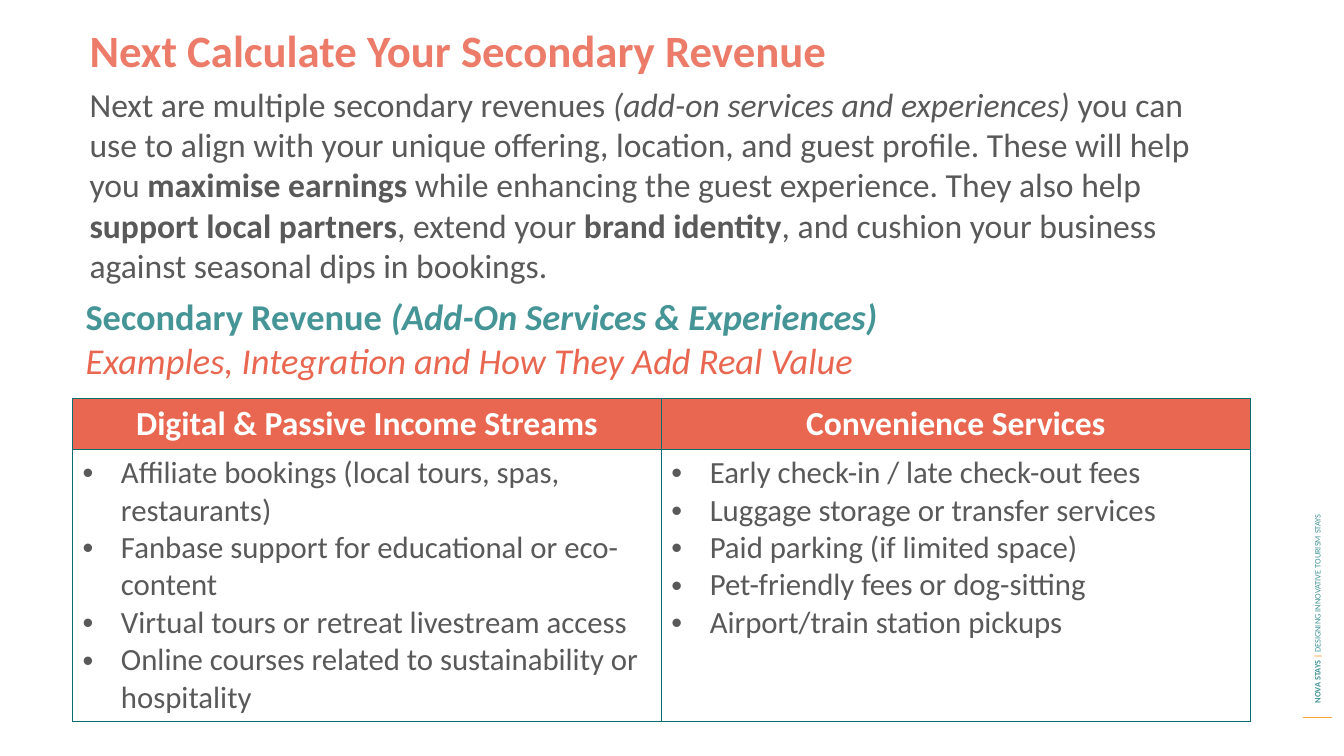
from dataclasses import dataclass

from lxml.etree import SubElement
from pptx import Presentation
from pptx.dml.color import RGBColor
from pptx.enum.shapes import MSO_CONNECTOR
from pptx.enum.text import MSO_ANCHOR, PP_ALIGN
from pptx.oxml.ns import qn
from pptx.util import Inches, Pt

FONT = "Calibri"
COLORS = {
    "coral": "E96751",
    "title": "EC7C69",
    "teal": "459597",
    "border": "086D6E",
    "text": "595959",
    "amber": "FBA63D",
    "white": "FFFFFF",
}


@dataclass(frozen=True)
class Span:
    text: str
    bold: bool | None = None
    italic: bool | None = None
    color: str | None = None


@dataclass(frozen=True)
class Para:
    spans: list[Span]
    size: float
    color: str
    bold: bool = False
    italic: bool = False
    space_after: float = 0
    align: PP_ALIGN = PP_ALIGN.LEFT
    bullet: bool = False


@dataclass(frozen=True)
class TextBlock:
    left: float
    top: float
    width: float
    height: float
    paras: list[Para]
    rotation: float = 0
    anchor: MSO_ANCHOR = MSO_ANCHOR.TOP


@dataclass(frozen=True)
class RevenueColumn:
    heading: str
    examples: list[str]


TEXT_BLOCKS = [
    TextBlock(10.18, 4.09, 5.77, 0.2, [
        Para([
            Span("NOVA STAYS ", bold=True),
            Span("| ", bold=True, color="amber"),
            Span("DESIGNING INNOVATIVE TOURISM STAYS"),
        ], 6, "teal"),
    ], rotation=270, anchor=MSO_ANCHOR.MIDDLE),
    TextBlock(0.75, 2.87, 11.61, 0.88, [
        Para([
            Span("Secondary Revenue "),
            Span("(Add-On Services & Experiences)", italic=True),
        ], 26, "teal", bold=True),
        Para([Span("Examples, Integration and How They Add Real Value")],
             26, "coral", italic=True),
    ]),
    TextBlock(0.79, 0.18, 13.21, 0.64, [
        Para([Span("Next Calculate Your Secondary Revenue")], 32, "title", bold=True),
    ]),
    TextBlock(0.79, 0.78, 11.48, 2.12, [
        Para([
            Span("Next are multiple secondary revenues "),
            Span("(add-on services and experiences) ", italic=True),
            Span("you can use to align with your unique offering, location, and guest "
                 "profile. These will help you "),
            Span("maximise earnings ", bold=True),
            Span("while enhancing the guest experience. They also help "),
            Span("support local partners", bold=True),
            Span(", extend your "),
            Span("brand identity", bold=True),
            Span(", and cushion your business against seasonal dips in bookings."),
        ], 24, "text", space_after=6),
    ]),
]

REVENUE_COLUMNS = [
    RevenueColumn("Digital & Passive Income Streams", [
        "Affiliate bookings (local tours, spas, restaurants)",
        "Fanbase support for educational or eco-content",
        "Virtual tours or retreat livestream access",
        "Online courses related to sustainability or hospitality",
    ]),
    RevenueColumn("Convenience Services", [
        "Early check-in / late check-out fees",
        "Luggage storage or transfer services",
        "Paid parking (if limited space)",
        "Pet-friendly fees or dog-sitting",
        "Airport/train station pickups",
    ]),
]


def rgb(name: str) -> RGBColor:
    return RGBColor.from_string(COLORS[name])


def add_bullet(paragraph) -> None:
    properties = paragraph._p.get_or_add_pPr()
    properties.set("marL", str(Inches(0.38)))
    properties.set("indent", str(-Inches(0.38)))
    SubElement(properties, qn("a:buFont"), typeface="Arial")
    SubElement(properties, qn("a:buChar"), char="•")


def write_paras(frame, paras: list[Para]) -> None:
    for index, para in enumerate(paras):
        paragraph = frame.add_paragraph() if index else frame.paragraphs[0]
        if para.bullet:
            add_bullet(paragraph)
        paragraph.alignment = para.align
        paragraph.space_after = Pt(para.space_after)
        font = paragraph.font
        font.name, font.size = FONT, Pt(para.size)
        font.bold, font.italic = para.bold, para.italic
        font.color.rgb = rgb(para.color)
        for span in para.spans:
            run = paragraph.add_run()
            run.text = span.text
            run.font.bold, run.font.italic = span.bold, span.italic
            if span.color:
                run.font.color.rgb = rgb(span.color)


def add_text_block(page, block: TextBlock) -> None:
    box = page.shapes.add_textbox(Inches(block.left), Inches(block.top),
                                  Inches(block.width), Inches(block.height))
    box.rotation = block.rotation
    box.text_frame.word_wrap = True
    box.text_frame.vertical_anchor = block.anchor
    write_paras(box.text_frame, block.paras)


def add_borders(cell) -> None:
    properties = cell._tc.get_or_add_tcPr()
    for side in ("lnL", "lnR", "lnT", "lnB"):
        line = SubElement(properties, qn(f"a:{side}"), w=str(Pt(1)))
        fill = SubElement(line, qn("a:solidFill"))
        SubElement(fill, qn("a:srgbClr"), val=COLORS["border"])


def add_revenue_table(page, columns: list[RevenueColumn]) -> None:
    table = page.shapes.add_table(2, len(columns), Inches(0.72), Inches(3.95),
                                  Inches(11.68), Inches(3.17)).table
    table.rows[0].height, table.rows[1].height = Inches(0.5), Inches(2.67)
    for index, column in enumerate(columns):
        heading, examples = table.cell(0, index), table.cell(1, index)
        for cell, fill in ((heading, "coral"), (examples, "white")):
            add_borders(cell)
            cell.fill.solid()
            cell.fill.fore_color.rgb = rgb(fill)
        write_paras(heading.text_frame, [
            Para([Span(column.heading)], 24, "white", bold=True, align=PP_ALIGN.CENTER)])
        write_paras(examples.text_frame, [
            Para([Span(example)], 22, "text", bullet=True) for example in column.examples])


def add_footer_line(page) -> None:
    line = page.shapes.add_connector(MSO_CONNECTOR.STRAIGHT, Inches(12.92), Inches(7.12),
                                     Inches(13.21), Inches(7.12))
    line.line.color.rgb = rgb("amber")
    line.line.width = Pt(0.75)
    SubElement(line._element.spPr, qn("a:effectLst"))


def main() -> None:
    deck = Presentation()
    deck.slide_width, deck.slide_height = Inches(13.33), Inches(7.5)
    page = deck.slides.add_slide(deck.slide_layouts[6])
    add_footer_line(page)
    add_revenue_table(page, REVENUE_COLUMNS)
    for block in TEXT_BLOCKS:
        add_text_block(page, block)
    deck.save("out.pptx")


if __name__ == "__main__":
    main()
